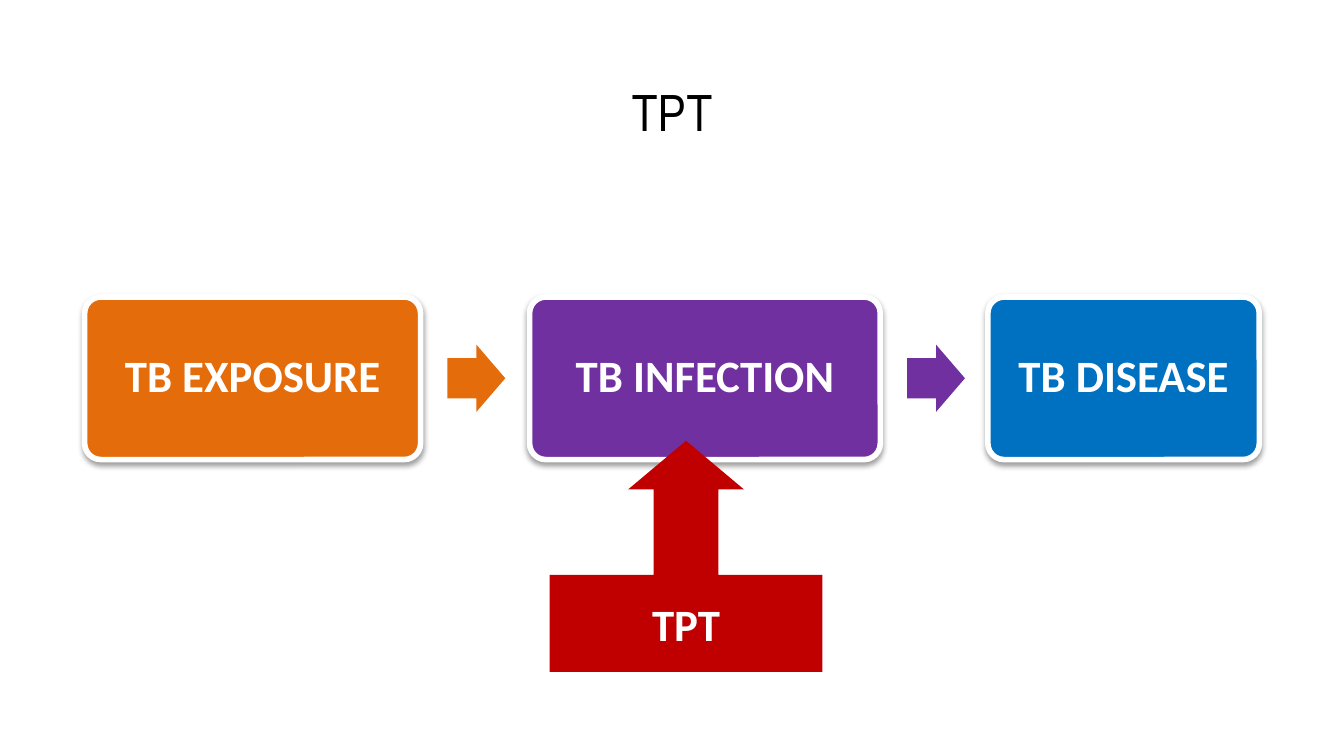
from lxml.etree import SubElement as Sub
from pptx import Presentation
from pptx.dml.color import RGBColor
from pptx.enum.shapes import MSO_SHAPE as Kind
from pptx.enum.text import MSO_ANCHOR as Anchor, MSO_AUTO_SIZE as Fit, PP_ALIGN as Align
from pptx.oxml.ns import qn
from pptx.util import Inches, Pt

WHITE, RED = "FFFFFF", "C00000"
TOP, HIGH = 2.21, 1.21      # row of stages
GAP = 0.2                   # space before an arrow
WIDE, TALL = 0.43, 0.5      # arrow size

# Label, left, width, colour
STAGES = [
    ("TB EXPOSURE", 0.63, 2.5, "E46C0A"),
    ("TB INFECTION", 3.94, 2.61, "7030A0"),
    ("TB DISEASE", 7.35, 2.02, "0070C0"),
]


def paint(color, tone):
    color.rgb = RGBColor.from_string(tone)


def write(shape, text, font, size, tone, bold=False):
    frame = shape.text_frame
    frame.text = text
    frame.word_wrap = True
    para = frame.paragraphs[0]
    para.alignment = Align.CENTER
    face = para.runs[0].font
    face.name, face.size, face.bold = font, Pt(size), bold
    paint(face.color, tone)
    return para


def label(shape, text):
    shape.text_frame.vertical_anchor = Anchor.MIDDLE
    return write(shape, text, "Calibri", 24, WHITE, True)


def block(slide, kind, box, tone, adjust):
    shape = slide.shapes.add_shape(kind, *map(Inches, box))
    shape.shadow.inherit = False
    shape.fill.solid()
    paint(shape.fill.fore_color, tone)
    shape.line.fill.background()
    for i, value in enumerate(adjust):
        shape.adjustments[i] = value
    return shape


def shade(shape):
    # Soft shadow straight below
    effects = shape._element.spPr.find(qn("a:effectLst"))
    outer = Sub(effects, qn("a:outerShdw"), blurRad=str(Pt(3.1)),
                dist=str(Pt(1.6)), dir="5400000", rotWithShape="0")
    color = Sub(outer, qn("a:srgbClr"), val="000000")
    Sub(color, qn("a:alpha"), val="38000")


def stage(slide, text, left, width, tone):
    box = block(slide, Kind.ROUNDED_RECTANGLE, (left, TOP, width, HIGH), tone, [0.1])
    box.line.width = Pt(3)
    paint(box.line.color, WHITE)
    shade(box)
    label(box, text).line_spacing = 0.9


def arrow(slide, left, tone):
    top = TOP + (HIGH - TALL) / 2
    block(slide, Kind.RIGHT_ARROW, (left, top, WIDE, TALL), tone, [0.6, 0.5])


def head(slide, text):
    title = slide.shapes.title
    title.left, title.top = Inches(0.34), Inches(0.49)
    title.width, title.height = Inches(9.32), Inches(0.63)
    frame = title.text_frame
    frame.auto_size = Fit.NONE
    frame.vertical_anchor = Anchor.TOP
    frame.margin_top = frame.margin_bottom = Inches(0.1)
    write(title, text, "Arial Narrow", 28, "000000")


def main():
    # Wide 16:9 slide
    deck = Presentation()
    deck.slide_width = Inches(10)
    deck.slide_height = Inches(10 * 9 / 16)
    slide = deck.slides.add_slide(deck.slide_layouts[5])
    head(slide, "TPT")

    # Stages, with an arrow after each but the last
    for text, left, width, tone in STAGES:
        stage(slide, text, left, width, tone)
        if text != STAGES[-1][0]:
            arrow(slide, left + width + GAP, tone)

    # Treatment that acts on the infection stage
    call = block(slide, Kind.UP_ARROW_CALLOUT, (4.09, 3.28, 2.03, 1.72), RED,
                 [0.28, 0.25, 0.21, 0.42])
    label(call, "TPT").space_after = Pt(10)

    deck.save("out.pptx")


if __name__ == "__main__":
    main()
